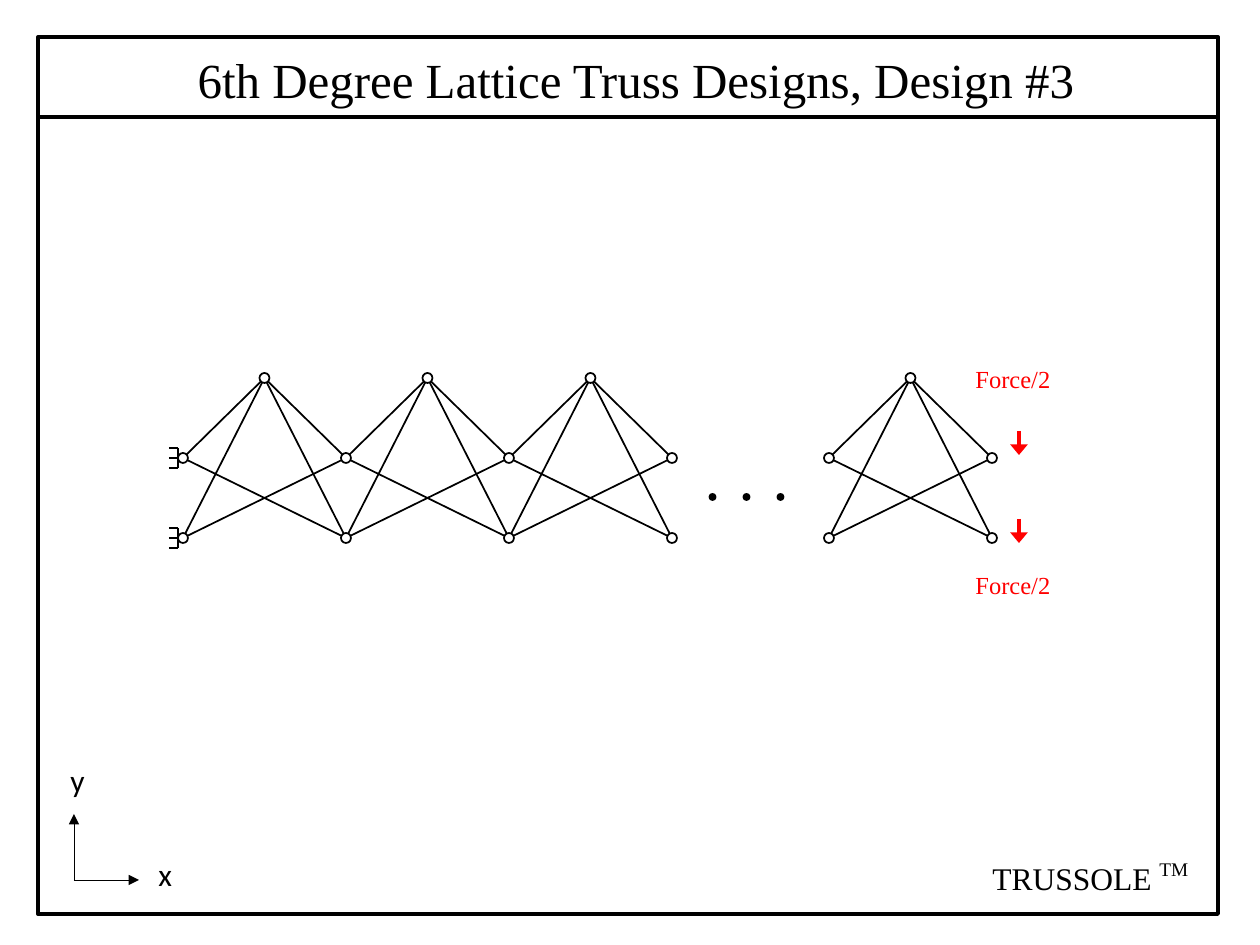
from pptx import Presentation
from pptx.dml.color import RGBColor
from pptx.enum.shapes import MSO_CONNECTOR, MSO_SHAPE
from pptx.enum.text import MSO_ANCHOR, MSO_AUTO_SIZE, PP_ALIGN
from pptx.oxml.xmlchemy import OxmlElement
from pptx.util import Emu, Pt

BLACK = RGBColor(0, 0, 0)
WHITE = RGBColor(255, 255, 255)
RED = RGBColor(255, 0, 0)
SERIF = "Times New Roman"
SANS = "Calibri"
STRAIGHT = MSO_CONNECTOR.STRAIGHT
RECTANGLE = MSO_SHAPE.RECTANGLE
OVAL = MSO_SHAPE.OVAL
TOP = MSO_ANCHOR.TOP
BOTTOM = MSO_ANCHOR.BOTTOM
LEFT = PP_ALIGN.LEFT
NO_AUTOFIT = MSO_AUTO_SIZE.NONE
TITLE_ONLY = 5
EMU_PER_INCH = 914400
PX_PER_INCH = 126


def px(length):
    return Emu(round(length * EMU_PER_INCH / PX_PER_INCH))


def write_text(shape, text, *, size, font=SERIF, color=BLACK, anchor=TOP):
    frame = shape.text_frame
    frame.word_wrap = True
    frame.auto_size = NO_AUTOFIT
    frame.vertical_anchor = anchor
    paragraph = frame.paragraphs[0]
    paragraph.alignment = LEFT
    run = paragraph.add_run()
    run.text = text
    run.font.size = Pt(size)
    run.font.name = font
    run.font.color.rgb = color


def add_text(slide, text, box, **text_format):
    shape = slide.shapes.add_textbox(*map(px, box))
    write_text(shape, text, **text_format)


def add_line(slide, start, end, *, width=1, color=BLACK, head_width=None):
    connector = slide.shapes.add_connector(STRAIGHT, *map(px, (*start, *end)))
    connector.line.width = Pt(width)
    connector.line.color.rgb = color
    if head_width:
        head = OxmlElement("a:tailEnd")
        head.set("type", "triangle")
        head.set("w", head_width)
        head.set("len", "med")
        connector.line._get_or_add_ln().append(head)
    connector._element.spPr.append(OxmlElement("a:effectLst"))


def add_outlined_shape(slide, kind, box, *, fill=None, width=1):
    shape = slide.shapes.add_shape(kind, *map(px, box))
    shape.shadow.inherit = False
    if fill is None:
        shape.fill.background()
    else:
        shape.fill.solid()
        shape.fill.fore_color.rgb = fill
    shape.line.color.rgb = BLACK
    shape.line.width = Pt(width)


def add_circle(slide, center, diameter, fill):
    x, y = center
    box = (x - diameter / 2, y - diameter / 2, diameter, diameter)
    add_outlined_shape(slide, OVAL, box, fill=fill)


def add_frame_and_title(slide, box):
    left, top, width, height = box
    add_outlined_shape(slide, RECTANGLE, box, width=2.25)
    add_line(slide, (left, top + 80), (left + width, top + 80), width=2)
    title = slide.shapes.title
    title.left, title.top = px(left + 147), px(top + 6)
    title.width, title.height = px(908), px(72)
    write_text(title, "6th Degree Lattice Truss Designs, Design #3", size=28)


def add_support(slide, joint):
    x, y = joint
    wall = x - 5
    add_line(slide, (wall, y - 10), (wall, y + 10))
    for offset in (-10, 0, 10):
        add_line(slide, (wall - 9, y + offset), (wall, y + offset))


def add_truss(slide, box):
    left, top, width, height = box
    pitch = 163
    upper, lower = top + height / 2, top + height
    last_left = left + width - pitch
    joints = set()
    for unit_left in (left, left + pitch, left + 2 * pitch, last_left):
        unit_right = unit_left + pitch
        apex = (unit_left + pitch / 2, top)
        upper_left, lower_left = (unit_left, upper), (unit_left, lower)
        upper_right, lower_right = (unit_right, upper), (unit_right, lower)
        corners = (upper_left, lower_left, upper_right, lower_right)
        for corner in corners:
            add_line(slide, corner, apex)
        add_line(slide, upper_left, lower_right)
        add_line(slide, lower_left, upper_right)
        joints.update((apex, *corners))
    for y in (upper, lower):
        add_support(slide, (left, y))
    for joint in sorted(joints):
        add_circle(slide, joint, 10, WHITE)
    gap_center = (left + 3 * pitch + last_left) / 2 - 4
    for offset in (-34, 0, 34):
        add_circle(slide, (gap_center + offset, top + 119), 6, BLACK)


def add_forces(slide, box):
    left, top, width, height = box
    for label_top, arrow_top in ((top, top + 73), (top + 206, top + 161)):
        add_text(slide, "Force/2", (left, label_top, width, 43), size=14, color=RED)
        add_line(slide, (left + 56, arrow_top), (left + 56, arrow_top + 24),
                 width=2, color=RED, head_width="lg")


def add_axes(slide, box):
    left, top, width, height = box
    origin = (left + 16, top + 125)
    tips = ((left + 81, top + 125), (left + 16, top + 59))
    labels = (("x", left + 88, top + 94), ("y", left, top))
    for tip, (name, label_left, label_top) in zip(tips, labels):
        add_line(slide, origin, tip, width=0.5, head_width="med")
        add_text(slide, name, (label_left, label_top, 39, 50), size=18, font=SANS)


def add_trade_name(slide, box):
    left, top, width, height = box
    add_text(slide, "TRUSSOLE", (left, top + 16, 192, 50), size=18)
    add_text(slide, "TM", (left + 167, top, 64, 50), size=11, anchor=BOTTOM)


def main():
    presentation = Presentation()
    presentation.slide_width, presentation.slide_height = px(1260), px(945)
    slide = presentation.slides.add_slide(presentation.slide_layouts[TITLE_ONLY])
    add_frame_and_title(slide, (38, 37, 1180, 877))
    add_truss(slide, (183, 378, 809, 160))
    add_forces(slide, (963, 358, 121, 249))
    add_axes(slide, (58, 755, 127, 144))
    add_trade_name(slide, (980, 837, 231, 66))
    presentation.save("out.pptx")


if __name__ == "__main__":
    main()
